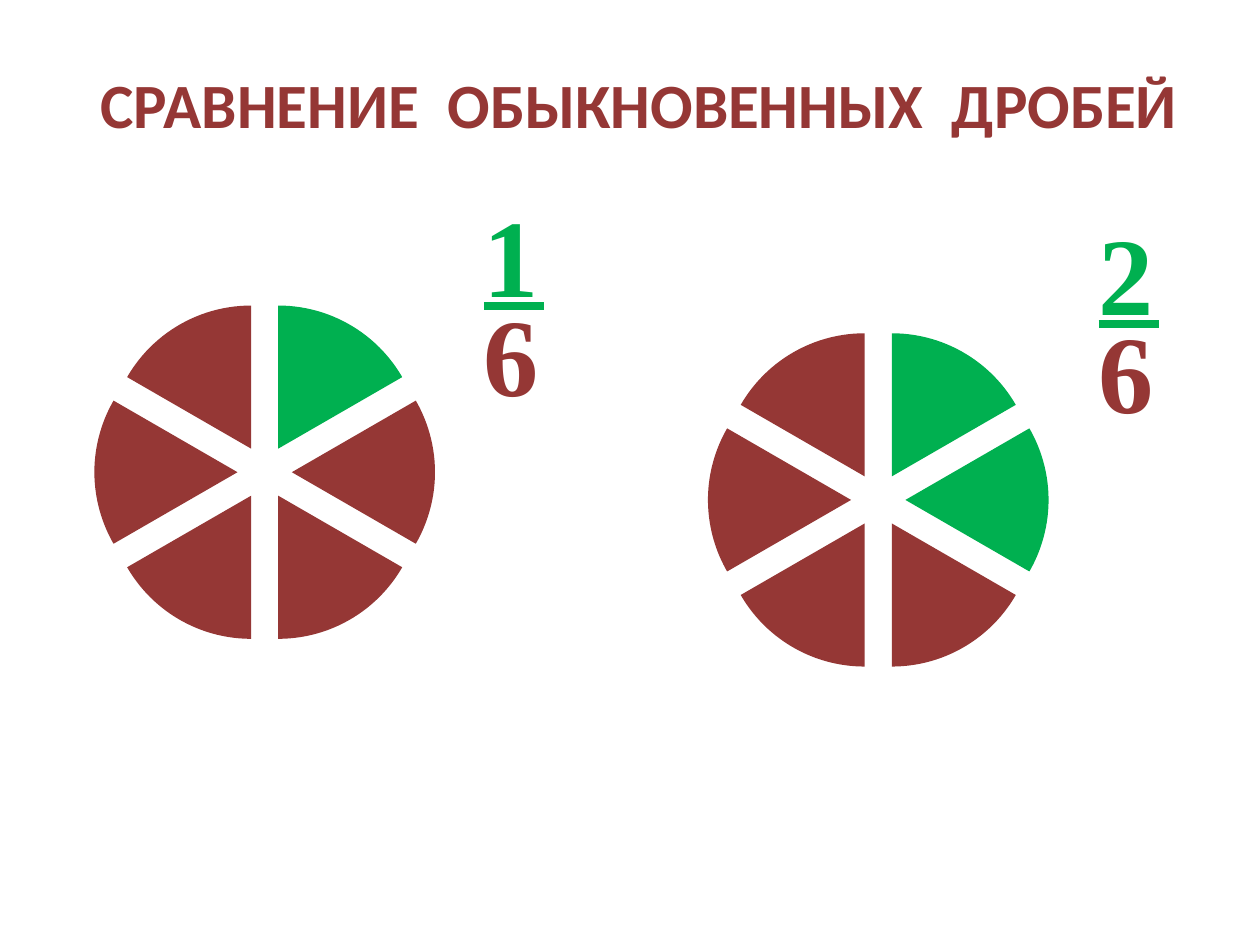
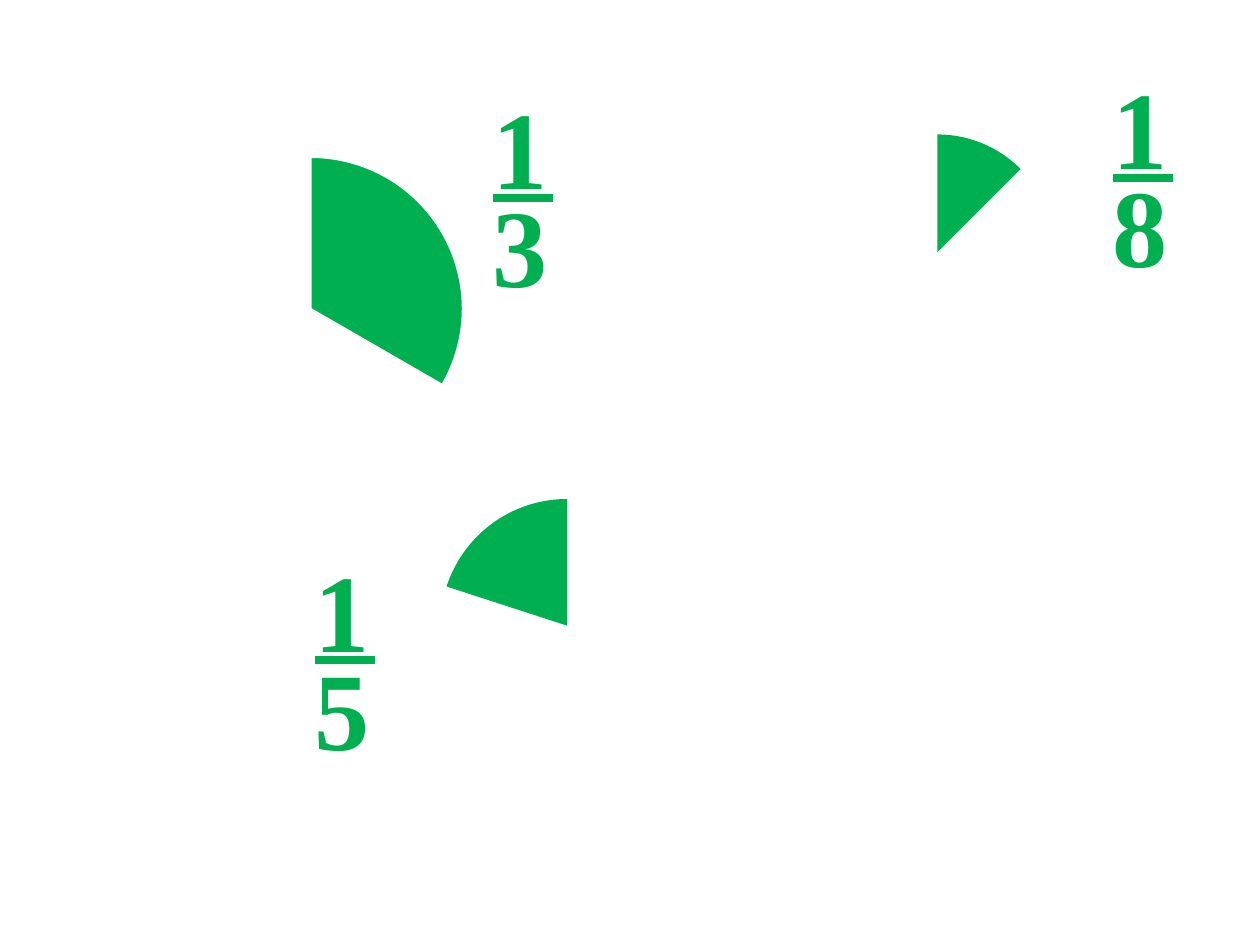
from dataclasses import dataclass
from typing import Any, Optional

from lxml import etree
from pptx import Presentation
from pptx.chart.data import CategoryChartData
from pptx.dml.color import RGBColor
from pptx.enum.chart import XL_CHART_TYPE
from pptx.enum.shapes import MSO_CONNECTOR
from pptx.enum.text import MSO_AUTO_SIZE
from pptx.oxml.ns import qn
from pptx.util import Emu, Pt

PIE = XL_CHART_TYPE.PIE
STRAIGHT = MSO_CONNECTOR.STRAIGHT
GROW = MSO_AUTO_SIZE.SHAPE_TO_FIT_TEXT

PX = 9144
COLORS = {"green": "00B050", "brown": "953735", "white": "FFFFFF", "black": "000000"}
TITLE_FONT = {"name": "Calibri", "size": Pt(36), "bold": True}
DIGIT_FONT = {"name": "Times New Roman", "size": Pt(63), "bold": True}
CHART_FONT = {"name": "Calibri", "size": Pt(18)}
NO_INSETS = {"margin_left": 0, "margin_top": 0, "margin_right": 0, "margin_bottom": 0}
DIGIT_W, DIGIT_H, BAR_W = 44, 106, 48
NUMERATOR_RISE, DENOMINATOR_RISE = 94, 16


@dataclass(frozen=True)
class Pie:
    x: int
    y: int
    w: int
    h: int
    slices: int
    value: int
    marked: tuple[int, ...]
    rest: str
    explosion: int
    layout: Optional[tuple[float, float, float, float]] = None
    outlined: bool = False


@dataclass(frozen=True)
class Fraction:
    x: int
    bar_y: int
    top: str
    bottom: str
    bottom_color: str = "green"


SIX_LAYOUT = (0.068, 0.074, 0.823, 0.845)
COMPARED_PIES = [
    Pie(536, 238, 336, 320, 6, 17, (0, 1), "brown", 19, SIX_LAYOUT),
    Pie(49, 216, 336, 320, 6, 17, (0,), "brown", 19, SIX_LAYOUT),
]
COMPARED_FRACTIONS = [
    Fraction(872, 257, "2", "6", "brown"),
    Fraction(384, 243, "1", "6", "brown"),
]
UNIT_PIES = [
    Pie(102, 102, 313, 297, 3, 33, (0,), "white", 11, (0, 0.055, 0.853, 0.898), True),
    Pie(320, 375, 305, 305, 5, 20, (4,), "white", 38),
    Pie(594, 102, 258, 258, 8, 12, (0,), "white", 25, (0.093, 0.006, 0.907, 0.918)),
]
UNIT_FRACTIONS = [
    Fraction(391, 157, "1", "3"),
    Fraction(883, 141, "1", "8"),
    Fraction(250, 524, "1", "5"),
]


def px(*lengths: int) -> list[Emu]:
    return [Emu(length * PX) for length in lengths]


def rgb(color: str) -> RGBColor:
    return RGBColor.from_string(COLORS[color])


def apply(target: Any, values: dict[str, Any]) -> None:
    for name, value in values.items():
        setattr(target, name, value)


def add_text(shapes: Any, box: tuple[int, int, int, int], text: str, font: dict[str, Any],
             color: str, wrap: bool = False, insets: Optional[dict[str, int]] = None) -> None:
    tf = shapes.add_textbox(*px(*box)).text_frame
    apply(tf, {"word_wrap": wrap, "auto_size": GROW, **(insets or {})})
    r = tf.paragraphs[0].add_run()
    r.text = text
    apply(r.font, font)
    r.font.color.rgb = rgb(color)


def set_layout(chart: Any, layout: tuple[float, float, float, float]) -> None:
    area = chart._chartSpace.find(".//" + qn("c:plotArea"))
    for old in area.findall(qn("c:layout")):
        area.remove(old)
    node = etree.Element(qn("c:layout"))
    area.insert(0, node)
    manual = etree.SubElement(node, qn("c:manualLayout"))
    settings = [("layoutTarget", "inner"), ("xMode", "edge"), ("yMode", "edge"),
                *zip("xywh", layout)]
    for tag, value in settings:
        etree.SubElement(manual, qn(f"c:{tag}")).set("val", str(value))


def add_pie(s: Any, pie: Pie) -> None:
    data = CategoryChartData()
    data.categories = [str(n + 1) for n in range(pie.slices)]
    data.add_series("Series 1", [pie.value] * pie.slices)
    chart = s.shapes.add_chart(PIE, *px(pie.x, pie.y, pie.w, pie.h), data).chart
    apply(chart, {"has_title": False, "has_legend": False})
    apply(chart.font, CHART_FONT)
    chart.font.color.rgb = rgb("black")
    plot = chart.plots[0]
    plot.vary_by_categories = True
    series = plot.series[0]
    for n in range(pie.slices):
        fmt = series.points[n].format
        fmt.fill.solid()
        fmt.fill.fore_color.rgb = rgb("green" if n in pie.marked else pie.rest)
        if pie.outlined:
            fmt.line.color.rgb = rgb("white")
            fmt.line.width = Pt(0.75)
        else:
            fmt.line.fill.background()
    explosion = etree.Element(qn("c:explosion"))
    explosion.set("val", str(pie.explosion))
    series._element.find(qn("c:dPt")).addprevious(explosion)
    if pie.layout:
        set_layout(chart, pie.layout)


def add_fraction(s: Any, fraction: Fraction) -> None:
    shapes = s.shapes.add_group_shape().shapes
    x, y = fraction.x, fraction.bar_y
    bar = shapes.add_connector(STRAIGHT, *px(x, y, x + BAR_W, y))
    bar.line.color.rgb = rgb("green")
    bar.line.width = Pt(4.5)
    etree.SubElement(bar._element.spPr, qn("a:effectLst"))
    add_text(shapes, (x, y - DENOMINATOR_RISE, DIGIT_W, DIGIT_H), fraction.bottom,
             DIGIT_FONT, fraction.bottom_color, insets=NO_INSETS)
    add_text(shapes, (x, y - NUMERATOR_RISE, DIGIT_W, DIGIT_H), fraction.top,
             DIGIT_FONT, "green", wrap=True, insets=NO_INSETS)


def add_slide(prs: Any, pies: list[Pie], fractions: list[Fraction]) -> Any:
    s = prs.slides.add_slide(prs.slide_layouts[6])
    s.background.fill.solid()
    s.background.fill.fore_color.rgb = rgb("white")
    for pie in pies:
        add_pie(s, pie)
    for fraction in fractions:
        add_fraction(s, fraction)
    return s


def main() -> None:
    prs = Presentation()
    prs.slide_width, prs.slide_height = px(1000, 750)
    s = add_slide(prs, COMPARED_PIES, COMPARED_FRACTIONS)
    add_text(s.shapes, (70, 47, 884, 71), "СРАВНЕНИЕ  ОБЫКНОВЕННЫХ  ДРОБЕЙ", TITLE_FONT, "brown")
    add_slide(prs, UNIT_PIES, UNIT_FRACTIONS)
    prs.save("out.pptx")


if __name__ == "__main__":
    main()
